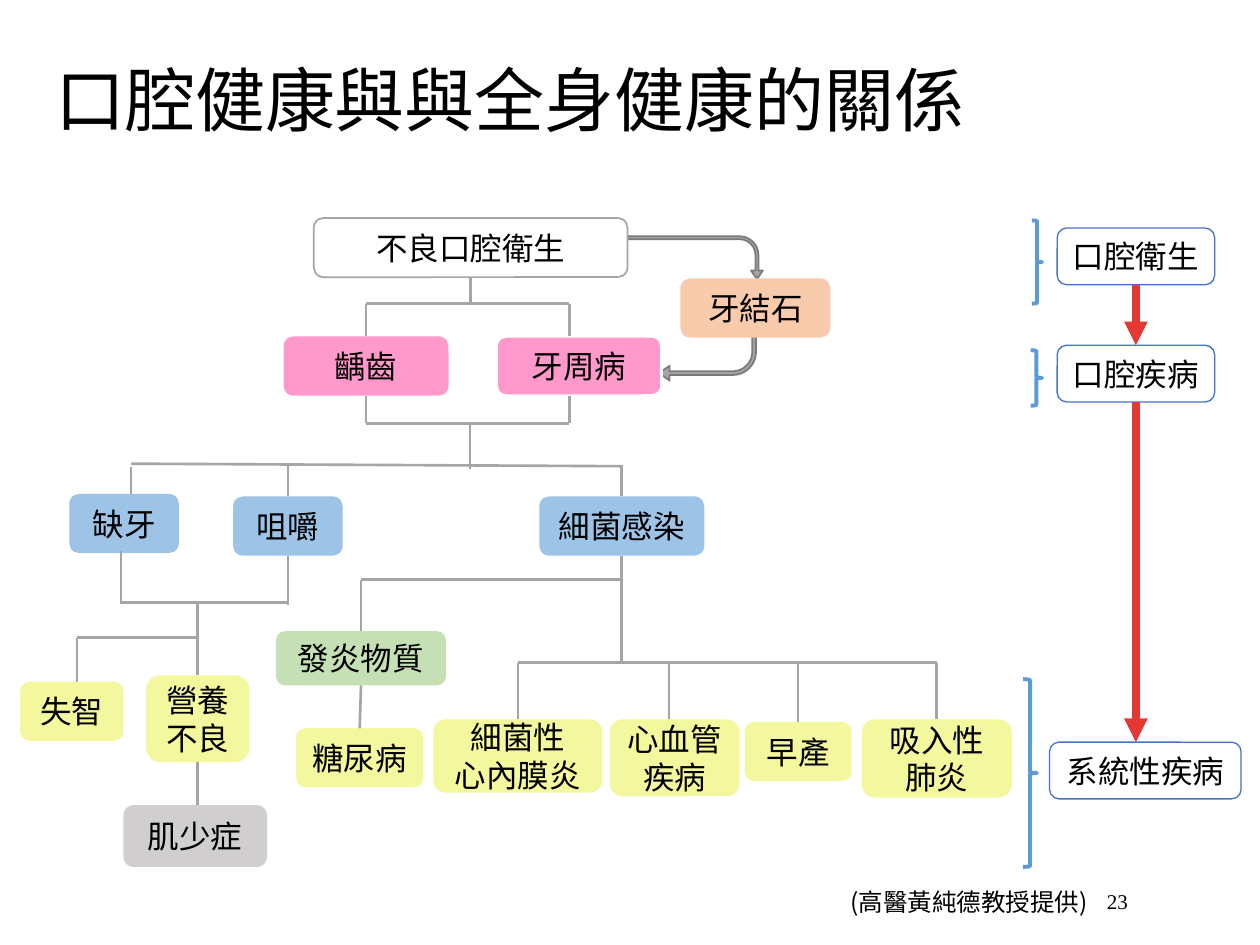
from lxml import etree
from pptx import Presentation
from pptx import util as u
from pptx.dml.color import RGBColor
from pptx.enum import shapes, text
from pptx.oxml.ns import qn

BLACK = RGBColor(0x00, 0x00, 0x00)
WHITE = RGBColor(0xFF, 0xFF, 0xFF)
PINK = RGBColor(0xFF, 0x99, 0xCC)
SKY = RGBColor(0x9D, 0xC3, 0xE6)
YELLOW = RGBColor(0xF3, 0xF7, 0x9D)
PEACH = RGBColor(0xF8, 0xCB, 0xAD)
GREEN = RGBColor(0xC5, 0xE0, 0xB4)
SILVER = RGBColor(0xD0, 0xCE, 0xCE)
GREY = RGBColor(0xA5, 0xA5, 0xA5)
DARK_GREY = RGBColor(0x7A, 0x7A, 0x7A)
NAVY = RGBColor(0x44, 0x72, 0xC4)
BLUE = RGBColor(0x5B, 0x9B, 0xD5)
RED = RGBColor(0xE5, 0x37, 0x33)
SANS, SERIF = "Noto Sans CJK SC", "Times New Roman"
LEFT, CENTER, RIGHT = text.PP_ALIGN.LEFT, text.PP_ALIGN.CENTER, text.PP_ALIGN.RIGHT
TOP, MIDDLE = text.MSO_ANCHOR.TOP, text.MSO_ANCHOR.MIDDLE
KIND = shapes.MSO_SHAPE

deck = Presentation()
deck.slide_width, deck.slide_height = u.Inches(10), u.Inches(7.5)
COL, ROW = deck.slide_width / 100, deck.slide_height / 75
slide = deck.slides.add_slide(deck.slide_layouts[6])
boxes = {}


def write(frame, words, size, align, anchor=MIDDLE, face=SANS):
    frame.word_wrap = True
    frame.vertical_anchor = anchor
    frame.text = words
    for paragraph in frame.paragraphs:
        paragraph.alignment = align
        paragraph.font.size = u.Pt(size)
        paragraph.font.name = face
        paragraph.font.color.rgb = BLACK
        defaults = paragraph._p.find(".//" + qn("a:defRPr"))
        etree.SubElement(defaults, qn("a:ea"), typeface=face)


def wire(start, end, color=GREY, width=1.5):
    points = [(0, 0) if isinstance(p[0], str) else p for p in (start, end)]
    line = slide.shapes.add_connector(
        shapes.MSO_CONNECTOR.STRAIGHT,
        *[round(v * unit) for p in points for v, unit in zip(p, (COL, ROW))])
    for point, join in ((start, line.begin_connect), (end, line.end_connect)):
        if isinstance(point[0], str):
            join(boxes[point[0]], point[1])
    line.line.color.rgb = color
    line.line.width = u.Pt(width)
    etree.SubElement(line._element.spPr, qn("a:effectLst"))
    return line


for words, x, y, w, h, size, align, anchor, face in [
    ("口腔健康與與全身健康的關係", 3.4, 1, 86.2, 14.5, 40, LEFT, MIDDLE, SANS),
    ("23", 68, 69.5, 22.5, 4, 12, RIGHT, MIDDLE, SERIF),
    ("(高醫黃純德教授提供)", 66.5, 69.9, 21.1, 3.4, 14, LEFT, TOP, SANS),
]:
    caption = slide.shapes.add_textbox(
        round(x * COL), round(y * ROW), round(w * COL), round(h * ROW))
    write(caption.text_frame, words, size, align, anchor, face)
    if size == 40:
        caption.text_frame.paragraphs[0].line_spacing = 0.9

for x, y, w, h, turn in [(53.3, 14.9, 3.4, 11.1, 90), (52.3, 26, 7.7, 4.2, 180)]:
    bend = slide.shapes.add_shape(
        KIND.BENT_ARROW, round(x * COL), round(y * ROW), round(w * COL), round(h * ROW))
    bend.rotation = turn
    for i, share in enumerate((0.07, 0.14, 0.2, 0.44)):
        bend.adjustments[i] = share
    bend.shadow.inherit = False
    bend.fill.solid()
    bend.fill.fore_color.rgb = GREY
    bend.line.color.rgb = DARK_GREY
    bend.line.width = u.Pt(1)

for words, x, y, w, h, fill, edge in [
    ("不良口腔衛生", 24.9, 17.3, 24.9, 4.7, WHITE, GREY),
    ("牙結石", 54, 22.1, 11.9, 4.7, PEACH, None),
    ("齲齒", 22.5, 26.7, 13.1, 4.7, PINK, None),
    ("牙周病", 39.4, 26.7, 13.1, 4.7, PINK, WHITE),
    ("缺牙", 5.5, 39.2, 8.7, 4.7, SKY, None),
    ("咀嚼", 18.5, 39.4, 8.7, 4.7, SKY, None),
    ("細菌感染", 42.8, 39.4, 13.1, 4.7, SKY, None),
    ("發炎物質", 21.9, 50.1, 13.5, 4.3, GREEN, None),
    ("失智", 1.6, 54.1, 8.2, 4.7, YELLOW, None),
    ("營養不良", 11.6, 53.6, 8.2, 6.9, YELLOW, None),
    ("糖尿病", 23.5, 57.8, 10.1, 4.7, YELLOW, None),
    ("細菌性\n心內膜炎", 34.4, 57.1, 13.4, 5.8, YELLOW, None),
    ("心血管疾病", 48.4, 57.1, 10.3, 6.1, YELLOW, None),
    ("早產", 59.1, 57.3, 8.5, 4.7, YELLOW, None),
    ("吸入性\n肺炎", 68.4, 57.1, 11.9, 6.2, YELLOW, None),
    ("肌少症", 9.8, 63.9, 11.4, 4.9, SILVER, None),
    ("口腔衛生", 83.9, 18.1, 12.5, 4.5, None, NAVY),
    ("口腔疾病", 83.9, 27.4, 12.5, 4.5, None, NAVY),
    ("系統性疾病", 83.3, 58.9, 15.2, 4.5, None, NAVY),
]:
    box = slide.shapes.add_shape(
        KIND.ROUNDED_RECTANGLE, round(x * COL), round(y * ROW), round(w * COL), round(h * ROW))
    box.shadow.inherit = False
    if fill is None:
        box.fill.background()
    else:
        box.fill.solid()
        box.fill.fore_color.rgb = fill
    if edge is None:
        box.line.fill.background()
    else:
        box.line.color.rgb = edge
        box.line.width = u.Pt({GREY: 1, WHITE: 1.5, NAVY: 0.75}[edge])
    write(box.text_frame, words, 18, CENTER)
    box.text_frame.margin_left = box.text_frame.margin_right = u.Inches(0.05)
    boxes[words] = box

for start, end in [
    (("不良口腔衛生", 2), (37.35, 24.1)),
    ((29.05, 24.1), (45.2, 24.1)),
    ((29.05, 24.1), ("齲齒", 0)),
    ((45.2, 24.1), (45.2, 26.7)),
    (("齲齒", 2), (29.05, 33.6)),
    ((45.2, 31.4), (45.2, 33.6)),
    ((29.05, 33.6), (45.2, 33.6)),
    ((37.3, 33.6), (37.3, 37.2)),
    ((10.4, 36.8), (49.35, 37)),
    ((10.4, 37.1), (10.4, 39.2)),
    ((22.85, 36.9), ("咀嚼", 0)),
    ((49.35, 36.9), ("細菌感染", 0)),
    ((9.6, 43.7), (9.6, 47.8)),
    (("咀嚼", 2), (22.85, 48)),
    ((9.5, 47.8), (22.85, 47.8)),
    ((15.7, 47.8), ("營養不良", 0)),
    ((6.1, 50.6), (15.7, 50.6)),
    ((6.1, 50.6), (6.1, 54.1)),
    (("營養不良", 2), (15.7, 63.9)),
    (("細菌感染", 2), (49.35, 52.6)),
    ((28.65, 46), (49.35, 46)),
    ((28.65, 46), ("發炎物質", 0)),
    (("發炎物質", 2), ("糖尿病", 0)),
    ((41.1, 52.6), (74.35, 52.6)),
    ((41.1, 52.6), ("細菌性\n心內膜炎", 0)),
    ((53.1, 52.6), (53.1, 57.1)),
    ((63.35, 52.6), ("早產", 0)),
    ((74.35, 52.6), ("吸入性\n肺炎", 0)),
]:
    wire(start, end)

for start, end in [
    (("口腔衛生", 2), ("口腔疾病", 0)),
    (("口腔疾病", 2), (90.15, 58.9)),
]:
    stage = wire(start, end, RED, 4.5)
    etree.SubElement(stage.line._get_or_add_ln(), qn("a:tailEnd"), type="triangle")

for x, y, w, h in [(81.9, 17.5, 0.8, 6.6), (81.8, 27.8, 0.9, 4.4), (81.2, 53.9, 1.1, 14.9)]:
    brace = slide.shapes.add_shape(
        KIND.RIGHT_BRACE, round(x * COL), round(y * ROW), round(w * COL), round(h * ROW))
    brace.shadow.inherit = False
    brace.fill.background()
    brace.line.color.rgb = BLUE
    brace.line.width = u.Pt(2.25)

deck.save("out.pptx")
